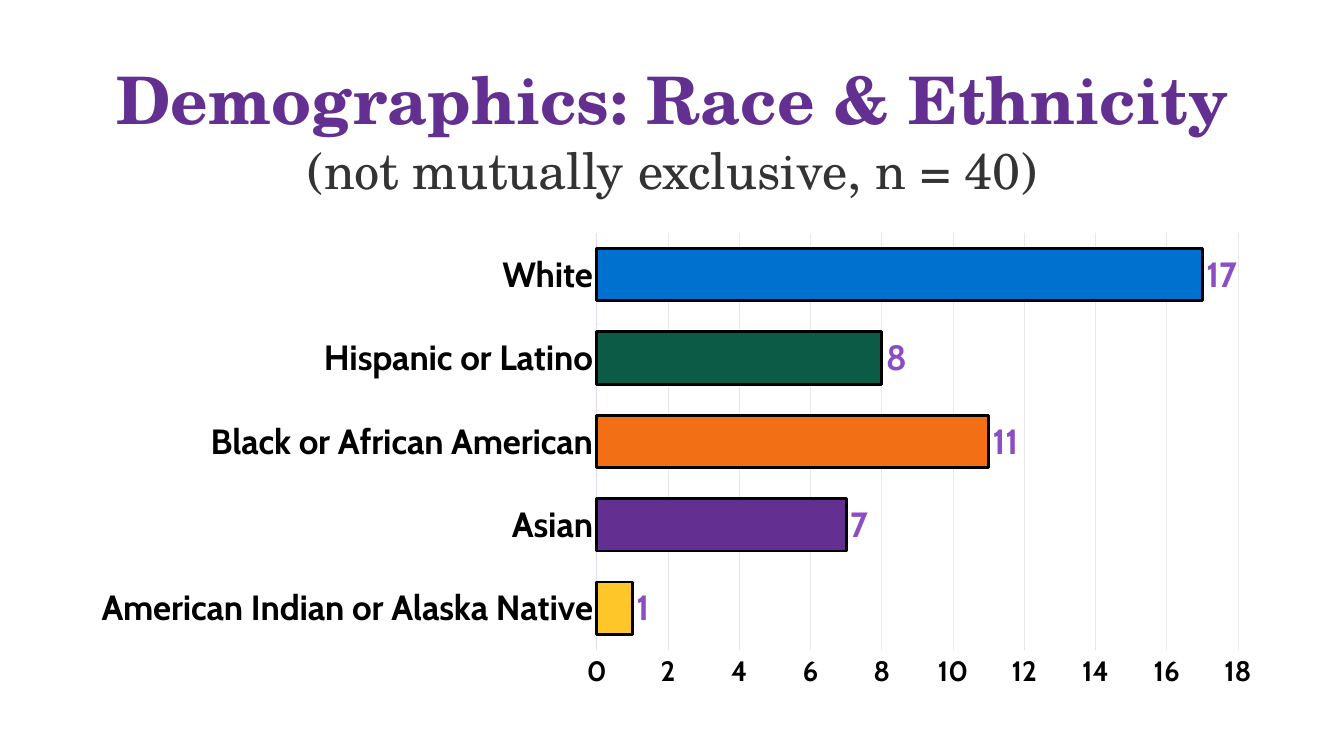
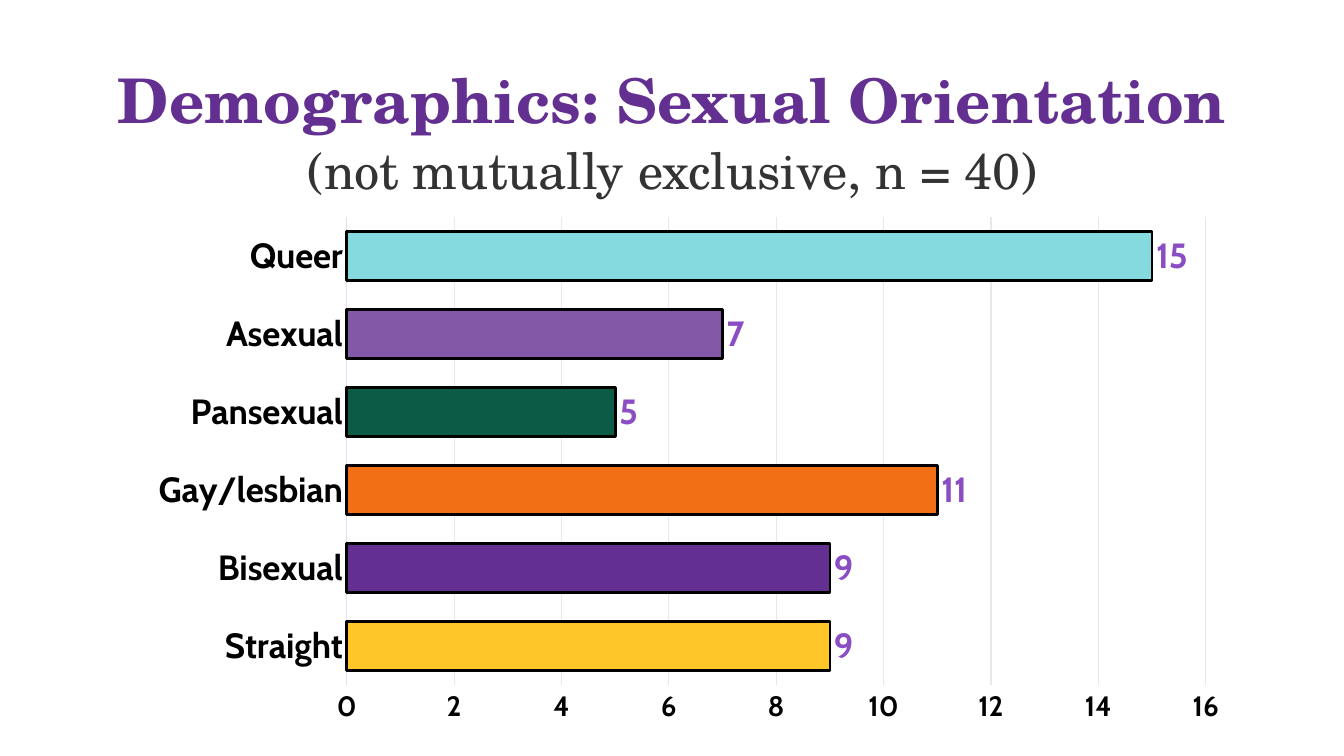
from dataclasses import dataclass

from pptx import Presentation
from pptx.chart.axis import _BaseAxis
from pptx.chart.chart import Chart
from pptx.chart.data import CategoryChartData
from pptx.dml.color import RGBColor
from pptx.enum.chart import XL_CHART_TYPE, XL_LABEL_POSITION, XL_TICK_MARK
from pptx.enum.text import MSO_ANCHOR, PP_ALIGN
from pptx.oxml import parse_xml
from pptx.oxml.ns import nsdecls, qn
from pptx.slide import Slide
from pptx.text.text import Font
from pptx.util import Inches, Pt


@dataclass(frozen=True)
class Theme:
    heading_font: str = "TeX Gyre Schola"
    chart_font: str = "Cabin"
    purple: str = "633092"
    lavender: str = "8258A7"
    yellow: str = "FFC629"
    orange: str = "F36F16"
    green: str = "0B5B46"
    blue: str = "0071CE"
    aqua: str = "84DADE"
    value: str = "8B4DC4"
    subtitle: str = "333333"
    black: str = "000000"
    axis_line: str = "E8DBF3"
    gridline: str = "E8E8E8"
    subtitle_size: float = 36
    label_size: float = 25
    scale_size: float = 20
    chart_size: float = 10
    thin_line: float = 0.75
    bar_outline: float = 2


THEME = Theme()


@dataclass(frozen=True)
class Box:
    """A rectangle in inches."""
    left: float
    top: float
    width: float
    height: float

    def lengths(self) -> tuple[Inches, Inches, Inches, Inches]:
        return Inches(self.left), Inches(self.top), Inches(self.width), Inches(self.height)


@dataclass(frozen=True)
class Bar:
    category: str
    value: int
    color: str


@dataclass(frozen=True)
class ChartSlide:
    title: str
    title_size: float
    chart_box: Box
    plot_box: Box
    scale_maximum: int
    bars: tuple[Bar, ...]  # from the bottom up


TITLE_BOX = Box(0.92, 0.2, 11.5, 1.65)
SUBTITLE_BOX = Box(0.92, 1.2, 11.5, 1.03)
SUBTITLE = "(not mutually exclusive, n = 40)"

CHART_SLIDES = (
    ChartSlide(
        "Demographics: Race & Ethnicity", 46.8,
        Box(0.77, 2.22, 11.89, 4.71), Box(5.92, 2.31, 6.36, 4.14), 18,
        (
            Bar("American Indian or Alaska Native", 1, THEME.yellow),
            Bar("Asian", 7, THEME.purple),
            Bar("Black or African American", 11, THEME.orange),
            Bar("Hispanic or Latino", 8, THEME.green),
            Bar("White", 17, THEME.blue),
        ),
    ),
    ChartSlide(
        "Demographics: Sexual Orientation", 44,
        Box(1.37, 2.05, 10.95, 5.25), Box(3.44, 2.15, 8.52, 4.65), 16,
        (
            Bar("Straight", 9, THEME.yellow),
            Bar("Bisexual", 9, THEME.purple),
            Bar("Gay/lesbian", 11, THEME.orange),
            Bar("Pansexual", 5, THEME.green),
            Bar("Asexual", 7, THEME.lavender),
            Bar("Queer", 15, THEME.aqua),
        ),
    ),
)


def style_font(font: Font, name: str, size: float, color: str, bold: bool = False) -> None:
    font.name = name
    font.size = Pt(size)
    font.bold = bold
    font.color.rgb = RGBColor.from_string(color)


def add_heading(slide: Slide, box: Box, text: str, size: float, color: str, bold: bool) -> None:
    frame = slide.shapes.add_textbox(*box.lengths()).text_frame
    frame.word_wrap = True
    frame.vertical_anchor = MSO_ANCHOR.MIDDLE
    paragraph = frame.paragraphs[0]
    paragraph.text = text
    paragraph.alignment = PP_ALIGN.CENTER
    paragraph.line_spacing = 0.9
    style_font(paragraph.font, THEME.heading_font, size, color, bold)


def place_plot(chart: Chart, chart_box: Box, plot_box: Box) -> None:
    """Fix the inner plot area as fractions of the chart frame."""
    plot_area = chart.element.find(".//" + qn("c:plotArea"))
    for layout in plot_area.findall(qn("c:layout")):
        plot_area.remove(layout)
    fractions = {
        "x": (plot_box.left - chart_box.left) / chart_box.width,
        "y": (plot_box.top - chart_box.top) / chart_box.height,
        "w": plot_box.width / chart_box.width,
        "h": plot_box.height / chart_box.height,
    }
    values = "".join(f'<c:{key} val="{value:.4f}"/>' for key, value in fractions.items())
    plot_area.insert(0, parse_xml(
        f'<c:layout {nsdecls("c")}><c:manualLayout><c:layoutTarget val="inner"/>'
        f'<c:xMode val="edge"/><c:yMode val="edge"/>{values}</c:manualLayout></c:layout>'
    ))


def style_axis(axis: _BaseAxis, size: float) -> None:
    axis.major_tick_mark = XL_TICK_MARK.NONE
    axis.minor_tick_mark = XL_TICK_MARK.NONE
    style_font(axis.tick_labels.font, THEME.chart_font, size, THEME.black, True)


def add_bar_chart(slide: Slide, content: ChartSlide) -> None:
    data = CategoryChartData()
    data.categories = [bar.category for bar in content.bars]
    data.add_series("Series 1", [bar.value for bar in content.bars])
    chart = slide.shapes.add_chart(
        XL_CHART_TYPE.BAR_CLUSTERED, *content.chart_box.lengths(), data
    ).chart
    chart.has_legend = False
    chart.has_title = False
    style_font(chart.font, THEME.heading_font, THEME.chart_size, THEME.purple)
    place_plot(chart, content.chart_box, content.plot_box)

    category_axis = chart.category_axis
    style_axis(category_axis, THEME.label_size)
    category_axis.has_major_gridlines = False
    category_line = category_axis.format.line
    category_line.color.rgb = RGBColor.from_string(THEME.axis_line)
    category_line.width = Pt(THEME.thin_line)

    value_axis = chart.value_axis
    style_axis(value_axis, THEME.scale_size)
    value_axis.minimum_scale = 0
    value_axis.maximum_scale = content.scale_maximum
    value_axis.major_unit = 2
    value_axis.format.line.fill.background()
    value_axis.has_major_gridlines = True
    gridline = value_axis.major_gridlines.format.line
    gridline.color.rgb = RGBColor.from_string(THEME.gridline)
    gridline.width = Pt(THEME.thin_line)

    plot = chart.plots[0]
    plot.gap_width = 59
    plot.vary_by_categories = False
    series = plot.series[0]
    for index, bar in enumerate(content.bars):
        point = series.points[index].format
        point.fill.solid()
        point.fill.fore_color.rgb = RGBColor.from_string(bar.color)
        point.line.color.rgb = RGBColor.from_string(THEME.black)
        point.line.width = Pt(THEME.bar_outline)

    labels = series.data_labels
    labels.show_value = True
    labels.position = XL_LABEL_POSITION.OUTSIDE_END
    style_font(labels.font, THEME.chart_font, THEME.label_size, THEME.value, True)


def main() -> None:
    presentation = Presentation()
    presentation.slide_width = Inches(13.33)
    presentation.slide_height = Inches(7.5)
    blank_layout = presentation.slide_layouts[6]
    for content in CHART_SLIDES:
        slide = presentation.slides.add_slide(blank_layout)
        add_heading(slide, TITLE_BOX, content.title, content.title_size, THEME.purple, True)
        add_heading(slide, SUBTITLE_BOX, SUBTITLE, THEME.subtitle_size, THEME.subtitle, False)
        add_bar_chart(slide, content)
    presentation.save("out.pptx")


if __name__ == "__main__":
    main()
